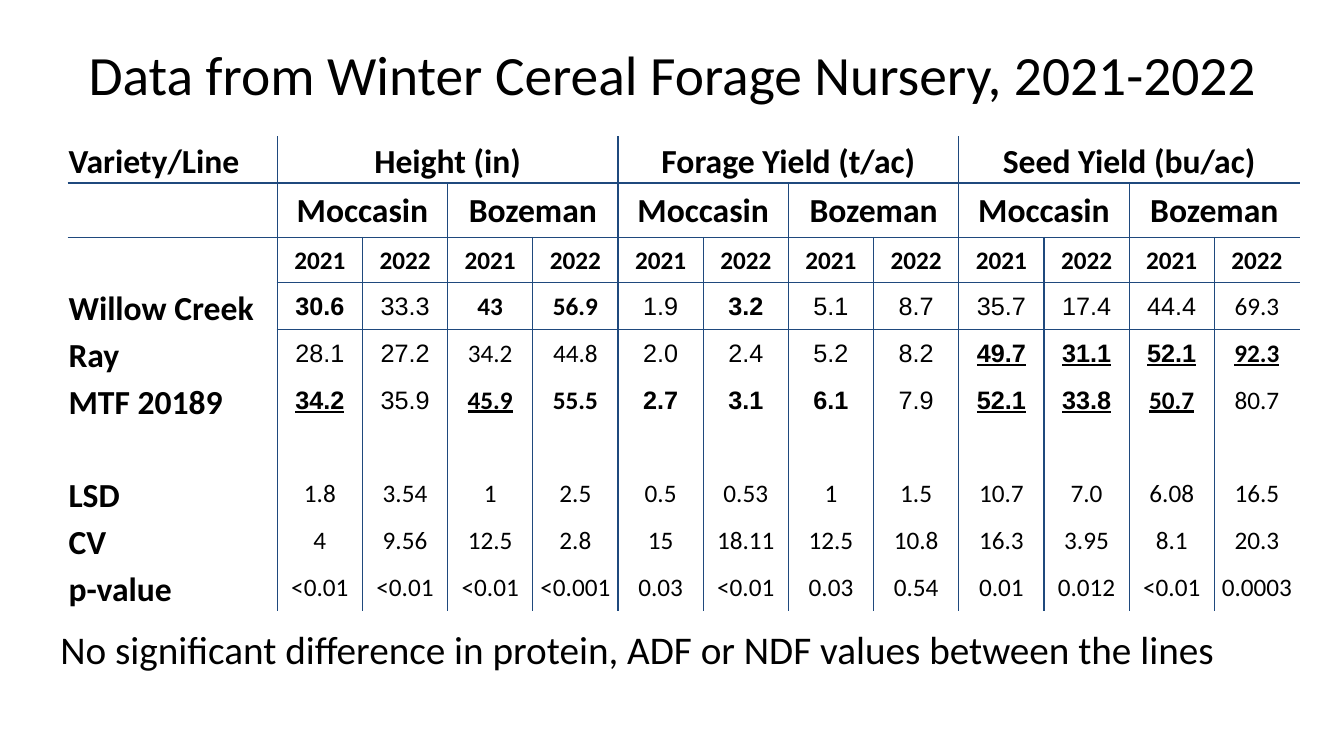
from pptx import Presentation
from pptx.dml.color import RGBColor as Rgb
from pptx.enum.text import MSO_ANCHOR as Anchor, MSO_AUTO_SIZE as Fit, PP_ALIGN as Align
from pptx.oxml import parse_xml
from pptx.oxml.ns import nsdecls
from pptx.util import Inches, Pt

COLORS = {"text": "000000", "rule": "1F497D"}
SITES = ["Moccasin", "Bozeman"]
HEADS = [
    (4, 24, Anchor.BOTTOM, ["Height (in)", "Forage Yield (t/ac)", "Seed Yield (bu/ac)"]),
    (2, 24, Anchor.MIDDLE, SITES * 3),
    (1, 18, Anchor.MIDDLE, ["2021", "2022"] * 6),
]
LABELS = ["Variety/Line", "", "", "Willow Creek", "Ray", "MTF 20189", "", "LSD", "CV", "p-value"]
DATA = {
    "Willow Creek": "*30.6 33.3 *43 *56.9 1.9 *3.2 5.1 8.7 35.7 17.4 44.4 69.3",
    "Ray": "28.1 27.2 34.2 44.8 2.0 2.4 5.2 8.2 _49.7 _31.1 _52.1 _92.3",
    "MTF 20189": "_34.2 35.9 _45.9 *55.5 *2.7 *3.1 *6.1 7.9 _52.1 _33.8 _50.7 80.7",
    "LSD": "1.8 3.54 1 2.5 0.5 0.53 1 1.5 10.7 7.0 6.08 16.5",
    "CV": "4 9.56 12.5 2.8 15 18.11 12.5 10.8 16.3 3.95 8.1 20.3",
    "p-value": "<0.01 <0.01 <0.01 <0.001 0.03 <0.01 0.03 0.54 0.01 0.012 <0.01 0.0003",
}
LINES = ["Willow Creek", "Ray", "MTF 20189"]
PLAIN = "{2D5ABB26-0587-4C30-8999-92F81FD0307C}"


class Deck:
    def __init__(self):
        self.prs = Presentation()
        self.prs.slide_width, self.prs.slide_height = Inches(13.33), Inches(7.5)
        self.slide = self.prs.slides.add_slide(self.prs.slide_layouts[5])
        self.font = "Calibri"

    def label(self, frame, text, size, align=Align.LEFT, bold=False, under=False, face=None):
        frame.text = text
        par = frame.paragraphs[0]
        par.alignment = align
        for run in par.runs:
            font = run.font
            font.name, font.size = face or self.font, Pt(size)
            font.bold, font.underline = bold, under
            font.color.rgb = Rgb.from_string(COLORS["text"])

    def place(self, shape, left, top, width, height):
        shape.left, shape.top = Inches(left), Inches(top)
        shape.width, shape.height = Inches(width), Inches(height)

    def title(self, text, box):
        shape = self.slide.shapes.title
        self.place(shape, *box)
        frame = shape.text_frame
        frame.word_wrap, frame.auto_size = True, Fit.NONE
        frame.vertical_anchor = Anchor.MIDDLE
        self.label(frame, text, 39.6, Align.CENTER)

    def note(self, text, box):
        shape = self.slide.shapes.add_textbox(*map(Inches, box))
        shape.text_frame.word_wrap = True
        self.label(shape.text_frame, text, 28)

    def table(self, box, cols, rows):
        shape = self.slide.shapes.add_table(len(rows), len(cols), *map(Inches, box))
        table = shape.table
        table.first_row = table.horz_banding = False
        props = table._tbl.tblPr
        props.find("{*}tableStyleId").text = PLAIN
        for col, width in zip(table.columns, cols):
            col.width = Inches(width)
        for row, height in zip(table.rows, rows):
            row.height = Inches(height)
        return table

    def cell(self, cell, text, size, anchor, **style):
        cell.margin_left = cell.margin_right = cell.margin_top = Inches(0.01)
        cell.margin_bottom = 0
        cell.vertical_anchor = anchor
        self.label(cell.text_frame, text, size, **style)

    def rule(self, cell, sides):
        props = cell._tc.get_or_add_tcPr()
        for side in "LRTB":
            if side in sides:
                props.append(parse_xml(
                    f'<a:ln{side} {nsdecls("a")} w="12700"><a:solidFill>'
                    f'<a:srgbClr val="{COLORS["rule"]}"/></a:solidFill></a:ln{side}>'))
        cell.fill.background()


def sides(row, col):
    span = HEADS[row][0] if row < len(HEADS) else 1
    marks = ""
    if col and (col - 1) % span == 0:
        marks += "L"
    if col < 12 and col % span == 0:
        marks += "R"
    if row in (2, 3) and col or row == 1:
        marks += "T"
    if row in (1, 2) and col or row == 0:
        marks += "B"
    return marks


def main():
    deck = Deck()
    deck.title("Data from Winter Cereal Forage Nursery, 2021-2022", (0.67, 0.1, 12, 1.25))
    step = 3.72 / 8
    cols = [2.08] + [10.14 / 12] * 12
    table = deck.table((0.67, 1.35, 12.22, 4.71), cols, [step, 0.54, 0.45] + [step] * 7)
    for row, label in enumerate(LABELS):
        for col in range(13):
            deck.rule(table.cell(row, col), sides(row, col))
        deck.cell(table.cell(row, 0), label, 24, Anchor.BOTTOM, bold=True)
        for col, value in enumerate(DATA.get(label, "").split(), 1):
            arial = label in LINES and col not in (3, 4, 12) and value != "_50.7"
            deck.cell(table.cell(row, col), value.lstrip("*_"), 18, Anchor.MIDDLE,
                      align=Align.CENTER, bold=value[0] in "*_", under=value[0] == "_",
                      face="Arial" if arial else None)
    for row, (span, size, anchor, names) in enumerate(HEADS):
        for spot, name in enumerate(names):
            col = 1 + spot * span
            cell = table.cell(row, col)
            if span > 1:
                cell.merge(table.cell(row, col + span - 1))
            deck.cell(cell, name, size, anchor, align=Align.CENTER, bold=True)
    deck.note("No significant difference in protein, ADF or NDF values between the lines",
              (0.5, 6.15, 11.72, 0.57))
    deck.prs.save("out.pptx")


if __name__ == "__main__":
    main()
